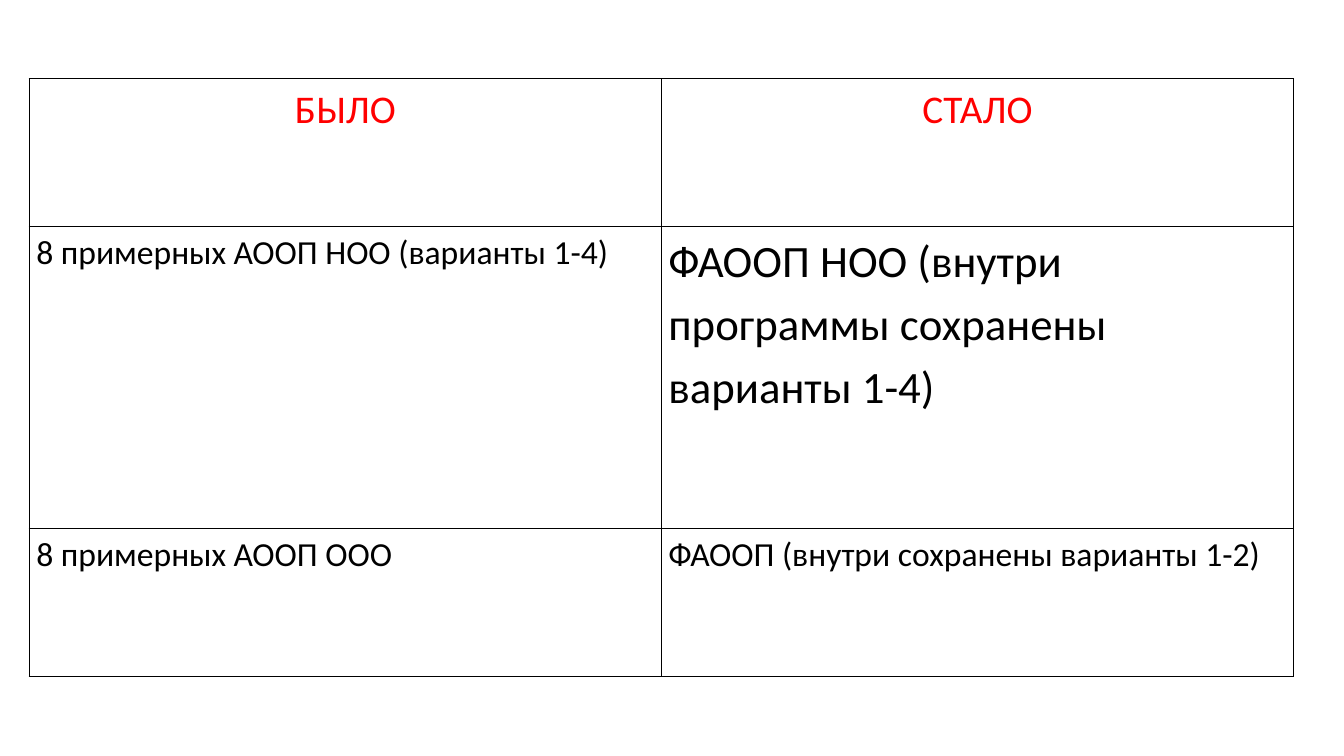
from lxml.etree import SubElement
from pptx import Presentation
from pptx.dml.color import RGBColor
from pptx.enum.text import PP_ALIGN
from pptx.oxml.ns import qn
from pptx.util import Inches, Pt

RED = RGBColor(0xFF, 0x00, 0x00)
BLACK = RGBColor(0x00, 0x00, 0x00)
BLANK_LAYOUT = 6
LEFT, TOP = Inches(0.29), Inches(0.78)
COLUMN_WIDTH = Inches(6.27)
ROW_HEIGHTS = [Inches(1.47), Inches(2.99), Inches(1.47)]
CELL_FORMAT = {
    "margin_left": Inches(0.07),
    "margin_right": Inches(0.07),
    "margin_top": 0,
    "margin_bottom": 0,
}
HEADING = {"size": Pt(28), "color": RED, "align": PP_ALIGN.CENTER}
BODY = {"size": Pt(24), "color": BLACK, "align": PP_ALIGN.LEFT}
LARGE = {**BODY, "size": Pt(32)}
CONTENT = [
    [("БЫЛО", HEADING), ("СТАЛО", HEADING)],
    [
        ("8 примерных АООП НОО (варианты 1-4)", BODY),
        ("ФАООП НОО (внутри программы сохранены варианты 1-4)", LARGE),
    ],
    [
        ("8 примерных АООП ООО", BODY),
        ("ФАООП (внутри сохранены варианты 1-2)", BODY),
    ],
]


def set_attributes(target, values):
    """Set each named attribute of the target."""
    for name, value in values.items():
        setattr(target, name, value)


def draw_borders(cell):
    """Give the cell a thin black line on all four sides."""
    properties = cell._tc.get_or_add_tcPr()
    for side in ("a:lnL", "a:lnR", "a:lnT", "a:lnB"):
        line = SubElement(properties, qn(side), w=str(Pt(1)))
        fill = SubElement(line, qn("a:solidFill"))
        SubElement(fill, qn("a:srgbClr"), val=str(BLACK))


def fill_cell(cell, text, style):
    """Write one formatted paragraph in a bordered, unfilled cell."""
    set_attributes(cell, CELL_FORMAT)
    draw_borders(cell)
    cell.fill.background()
    para = cell.text_frame.paragraphs[0]
    set_attributes(para, {"alignment": style["align"], "line_spacing": 1.15})
    span = para.add_run()
    span.text = text
    set_attributes(span.font, {"name": "Calibri", "size": style["size"]})
    span.font.color.rgb = style["color"]


def add_comparison(page):
    """Add the table that sets the earlier programmes beside the new ones."""
    columns = len(CONTENT[0])
    table = page.shapes.add_table(
        len(CONTENT), columns, LEFT, TOP, columns * COLUMN_WIDTH, sum(ROW_HEIGHTS)
    ).table
    set_attributes(table, {"first_row": False, "horz_banding": False})
    for row, height, entries in zip(table.rows, ROW_HEIGHTS, CONTENT):
        row.height = height
        for cell, (text, style) in zip(row.cells, entries):
            fill_cell(cell, text, style)


def main():
    """Build the slide and save the deck."""
    deck = Presentation()
    set_attributes(deck, {"slide_width": Inches(13.33), "slide_height": Inches(7.5)})
    page = deck.slides.add_slide(deck.slide_layouts[BLANK_LAYOUT])
    add_comparison(page)
    deck.save("out.pptx")


if __name__ == "__main__":
    main()
